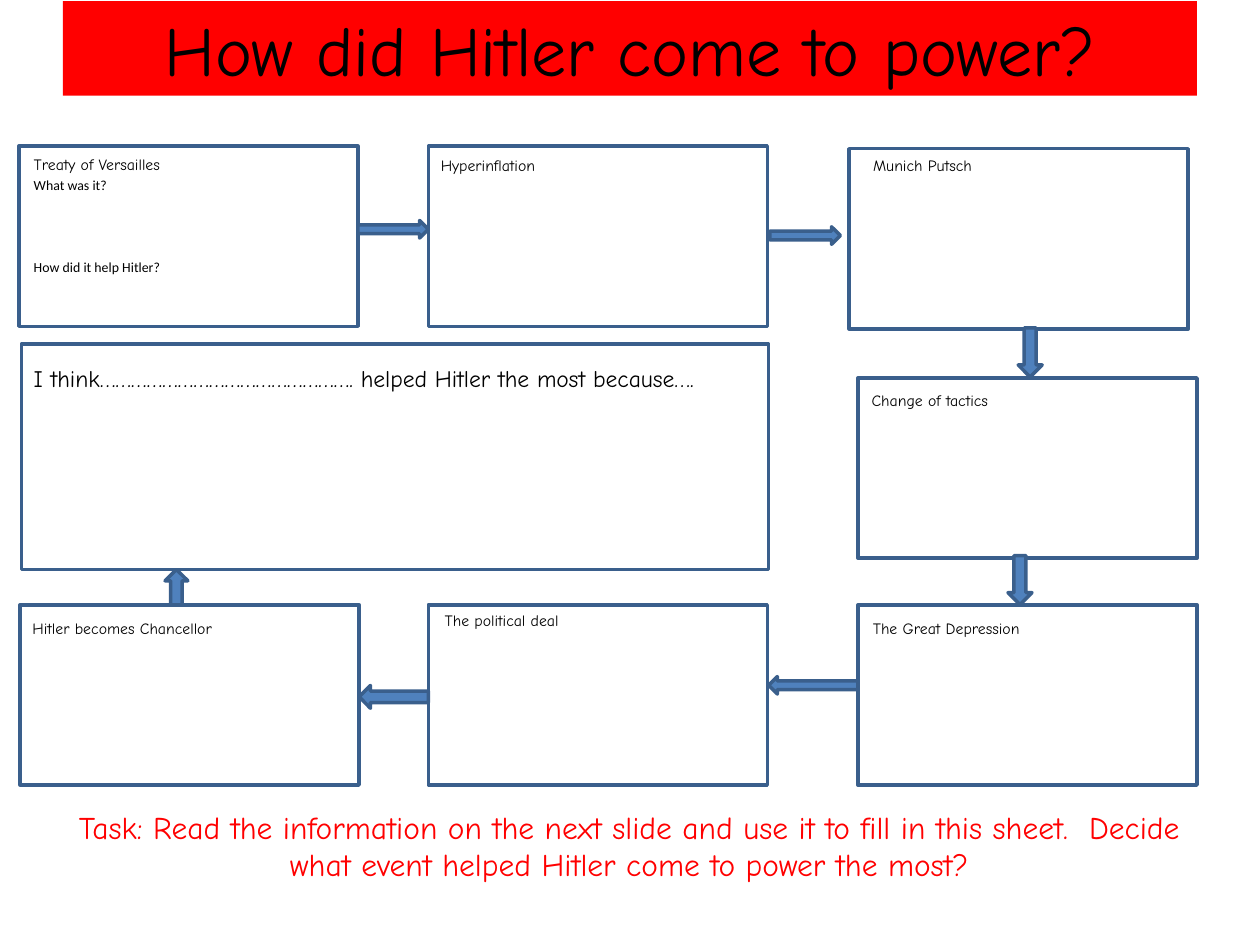
from pptx import Presentation
from pptx import util as u
from pptx.dml.color import RGBColor
from pptx.enum import shapes, text

PT = u.Pt
KIND = shapes.MSO_SHAPE
ALIGN = text.PP_ALIGN
HAND, PLAIN = "Comic Neue", "Calibri"
EDGE, BLUE, RED, WHITE, BLACK = "3A5F8C", "4F81BD", "FF0000", "FFFFFF", "000000"
BOX_W, BOX_H = 193.7, 103

STAGES = [
    ("Treaty of Versailles", 10.8, 83.5, 1.4, 1.4),
    ("Hyperinflation", 244.8, 83.5, 0, 2.2),
    ("Munich Putsch", 485.3, 85, 6.5, 0.7),
    ("Change of tactics", 490.3, 216, 0.7, 3.6),
    ("The Great Depression", 490.3, 345.6, 1.4, 4.3),
    ("The political deal", 244.8, 345.6, 2.2, 0),
    ("Hitler becomes Chancellor", 11.5, 345.6, 0, 4.3),
]

ARROWS = [
    (KIND.RIGHT_ARROW, 204.5, 126, 40.3, 10),
    (KIND.RIGHT_ARROW, 439.9, 129.6, 40.3, 10),
    (KIND.DOWN_ARROW, 581.8, 187.4, 13.7, 28),
    (KIND.DOWN_ARROW, 576, 317.5, 13.7, 28),
    (KIND.LEFT_ARROW, 439.2, 386.6, 51, 10),
    (KIND.LEFT_ARROW, 205.2, 391.7, 39.6, 13),
    (KIND.UP_ARROW, 94.3, 325.4, 13, 20.2),
]


def color(value):
    """Turn a hex string into a colour."""
    return RGBColor.from_string(value)


def apply(target, **values):
    """Set every given value as an attribute of the target."""
    for name, value in values.items():
        setattr(target, name, value)


def add_shape(s, kind, x, y, w, h, fill, edge=EDGE):
    """Add a filled shape, outlined unless edge is None."""
    sp = s.shapes.add_shape(kind, PT(x), PT(y), PT(w), PT(h))
    sp.shadow.inherit = False
    sp.fill.solid()
    sp.fill.fore_color.rgb = color(fill)
    if edge:
        sp.line.color.rgb = color(edge)
        sp.line.width = PT(2)
    else:
        sp.line.fill.background()
    return sp


def write(sp, lines, size, font=HAND, ink=BLACK, align=ALIGN.LEFT,
          anchor=text.MSO_ANCHOR.TOP, gap=0):
    """Write paragraphs into a shape, with a gap between them."""
    tf = sp.text_frame
    apply(tf, word_wrap=True, vertical_anchor=anchor)
    for i, line in enumerate(lines):
        p = tf.add_paragraph() if i else tf.paragraphs[0]
        apply(p, alignment=align, space_before=PT(gap if i else 0))
        r = p.add_run()
        r.text = line
        apply(r.font, name=font, size=PT(size))
        r.font.color.rgb = color(ink)


def add_text(s, x, y, w, h, lines, size, **style):
    """Add a wrapping text box."""
    write(s.shapes.add_textbox(PT(x), PT(y), PT(w), PT(h)), lines, size, **style)


def add_stage(s, label, x, y, dx, dy):
    """Add a stage box with its label offset from the corner."""
    add_shape(s, KIND.RECTANGLE, x, y, BOX_W, BOX_H, WHITE)
    add_text(s, x + dx, y + dy, 192.2, 18, [label], 9)


def main():
    """Build the worksheet slide."""
    prs = Presentation()
    apply(prs, slide_width=PT(720), slide_height=PT(540))
    s = prs.slides.add_slide(prs.slide_layouts[6])
    for stage in STAGES:
        add_stage(s, *stage)
    add_shape(s, KIND.RECTANGLE, 12.2, 196.6, 427, 128.9, WHITE)
    add_text(s, 12.2, 204.5, 427.7, 23.8,
             ["I think…………………………………………. helped Hitler the most because…."], 13.5)
    for arrow in ARROWS:
        add_shape(s, *arrow, BLUE)
    add_text(s, 12.2, 97.2, 108.7, 64.8,
             ["What was it?", "How did it help Hitler?"], 7.9, font=PLAIN, gap=37.8)
    title = add_shape(s, KIND.RECTANGLE, 36, 0.7, 648, 54, RED, None)
    write(title, ["How did Hitler come to power?"], 40,
          align=ALIGN.CENTER, anchor=text.MSO_ANCHOR.MIDDLE)
    add_text(s, 22.3, 457.9, 674.6, 87.8,
             ["Task: Read the information on the next slide and use it to fill in "
              "this sheet.  Decide what event helped Hitler come to power the most?"],
             18, ink=RED, align=ALIGN.CENTER)
    prs.save("out.pptx")


if __name__ == "__main__":
    main()
